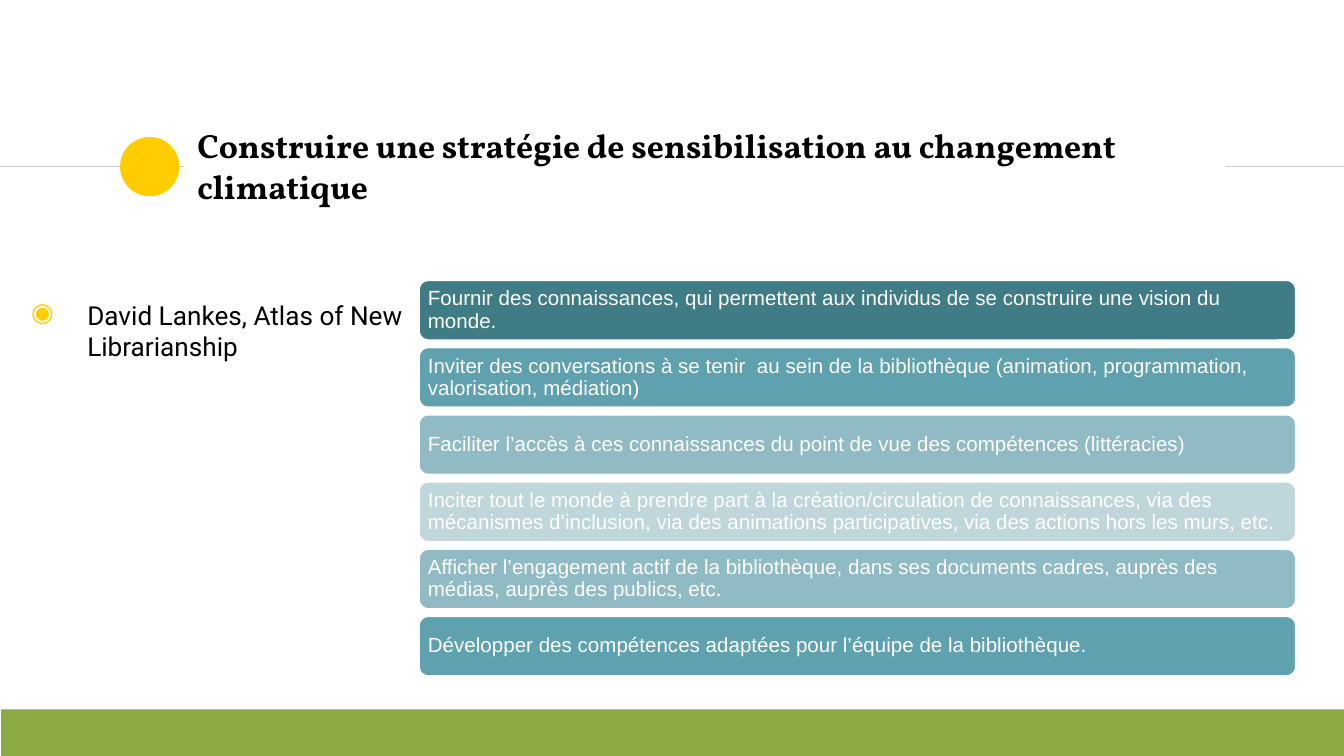
from lxml.etree import SubElement
from pptx import Presentation
from pptx.dml.color import RGBColor
from pptx.enum.shapes import MSO_CONNECTOR, MSO_SHAPE
from pptx.enum.text import MSO_ANCHOR, PP_ALIGN
from pptx.oxml.ns import qn
from pptx.util import Cm, Pt

COLORS = {
    "white": "FFFFFF", "black": "000000", "rule": "CCCCCC",
    "yellow": "FFCD00", "green": "8BAB42",
    "teal": "407C86", "blue": "5FA1AE", "mist": "90BBC4", "pale": "BFD6DB",
}
STRATEGY = [
    ("teal", "Fournir des connaissances, qui permettent aux individus de se construire une vision du monde."),
    ("blue", "Inviter des conversations à se tenir  au sein de la bibliothèque (animation, programmation, valorisation, médiation)"),
    ("mist", "Faciliter l’accès à ces connaissances du point de vue des compétences (littéracies)"),
    ("pale", "Inciter tout le monde à prendre part à la création/circulation de connaissances, via des mécanismes d’inclusion, via des animations participatives, via des actions hors les murs, etc."),
    ("mist", "Afficher l’engagement actif de la bibliothèque, dans ses documents cadres, auprès des médias, auprès des publics, etc."),
    ("blue", "Développer des compétences adaptées pour l’équipe de la bibliothèque."),
]
RULE_Y = 3.15
BAR_TOP, BAR_PITCH = 5.28, 1.27


def add_filled(kind, left, top, width, height, color):
    shape = slide.shapes.add_shape(kind, Cm(left), Cm(top), Cm(width), Cm(height))
    shape.shadow.inherit = False
    shape.fill.solid()
    shape.fill.fore_color.rgb = RGBColor.from_string(COLORS[color])
    shape.line.fill.background()
    return shape


def write(shape, text, anchor, inset, color, **font_format):
    """Put one left-aligned paragraph in the shape and return it."""
    frame = shape.text_frame
    margins = {f"margin_{side}": Cm(inset) for side in ("left", "top", "right", "bottom")}
    for name, value in {"word_wrap": True, "vertical_anchor": anchor, **margins}.items():
        setattr(frame, name, value)
    paragraph = frame.paragraphs[0]
    paragraph.alignment = PP_ALIGN.LEFT
    run = paragraph.add_run()
    run.text = text
    run.font.color.rgb = RGBColor.from_string(COLORS[color])
    for name, value in font_format.items():
        setattr(run.font, name, value)
    return paragraph


deck = Presentation()
deck.slide_width, deck.slide_height = Cm(25.4), Cm(14.29)
slide = deck.slides.add_slide(deck.slide_layouts[6])

# Heading with its rule and dot
for start, end in [(0, 3.81), (14.63, 25.4)]:
    rule = slide.shapes.add_connector(
        MSO_CONNECTOR.STRAIGHT, Cm(start), Cm(RULE_Y), Cm(end), Cm(RULE_Y))
    rule.line.color.rgb = RGBColor.from_string(COLORS["rule"])
    rule.line.width = Pt(0.75)
    SubElement(rule._element.spPr, qn("a:effectLst"))
add_filled(MSO_SHAPE.OVAL, 2.27, 2.59, 1.12, 1.12, "yellow")
heading = add_filled(MSO_SHAPE.RECTANGLE, 3.48, 2.52, 19.68, 1.22, "white")
write(heading, "Construire une stratégie de sensibilisation au changement climatique",
      MSO_ANCHOR.MIDDLE, 0.25, "black", name="Vollkorn", size=Pt(18), bold=True)

# Reference on the left
reference = slide.shapes.add_textbox(Cm(0.13), Cm(5.41), Cm(7.77), Cm(6.58))
citation = write(reference, "David Lankes, Atlas of New Librarianship",
                 MSO_ANCHOR.TOP, 0.25, "black", name="Roboto", size=Pt(14))
citation_format = citation._p.get_or_add_pPr()
citation_format.set("marL", str(Cm(1.27)))
citation_format.set("indent", str(-Cm(1.06)))
bullet_color = SubElement(citation_format, qn("a:buClr"))
SubElement(bullet_color, qn("a:srgbClr"), val=COLORS["yellow"])
SubElement(citation_format, qn("a:buChar"), char="◉")

# Strategy bars
for row, (color, action) in enumerate(STRATEGY):
    bar = add_filled(MSO_SHAPE.ROUNDED_RECTANGLE,
                     7.9, BAR_TOP + row * BAR_PITCH, 16.61, 1.17, color)
    bar.line.color.rgb = RGBColor.from_string(COLORS["white"])
    bar.line.width = Pt(2)
    step = write(bar, action, MSO_ANCHOR.MIDDLE, 0.13, "white", name="Arial", size=Pt(11))
    step.line_spacing = 0.9

add_filled(MSO_SHAPE.RECTANGLE, 0.02, 13.41, 25.4, 0.88, "green")

deck.save("out.pptx")
